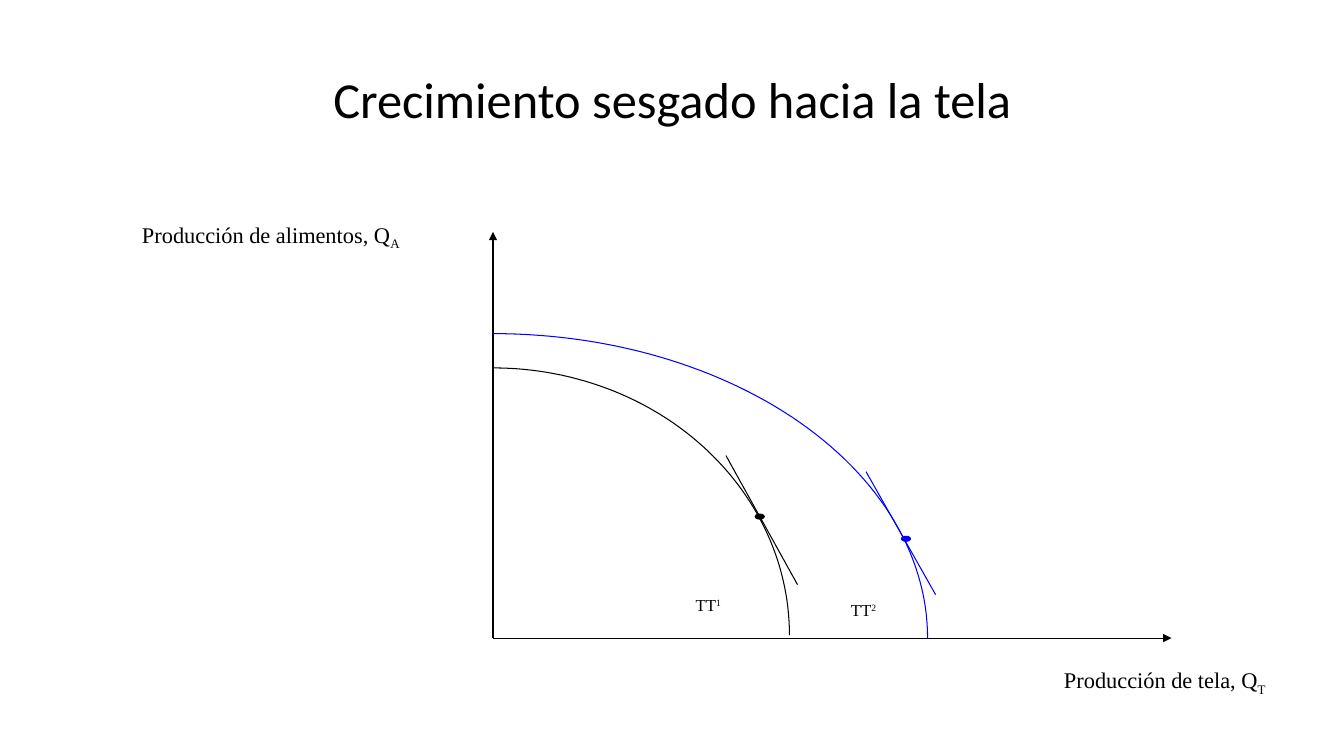
from math import cos, pi, sin

from lxml import etree
from pptx import Presentation
from pptx.dml.color import RGBColor
from pptx.enum.shapes import MSO_CONNECTOR, MSO_SHAPE
from pptx.enum.text import MSO_ANCHOR, PP_ALIGN
from pptx.oxml.ns import qn
from pptx.util import Inches, Pt

LEFT, CENTER, RIGHT = PP_ALIGN.LEFT, PP_ALIGN.CENTER, PP_ALIGN.RIGHT
TOP, MIDDLE = MSO_ANCHOR.TOP, MSO_ANCHOR.MIDDLE
RECTANGLE, OVAL = MSO_SHAPE.RECTANGLE, MSO_SHAPE.OVAL
STRAIGHT = MSO_CONNECTOR.STRAIGHT

THEME = {
    "black": RGBColor(0, 0, 0),
    "blue": RGBColor(0, 0, 255),
    "white": RGBColor(255, 255, 255),
    "title_font": "Calibri",
    "label_font": "Times New Roman",
    "title": Pt(36),
    "axis": Pt(16),
    "curve": Pt(12),
    "stroke": Pt(0.75),
}

TITLE = ("Crecimiento sesgado hacia la tela", (1.42, 0.33, 10.5, 1.29))
LABELS = [
    ("Producción de alimentos, Q", "A", -25, "axis", LEFT, (1.31, 2.14, 3.41, 1.53)),
    ("Producción de tela, Q", "T", -25, "axis", RIGHT, (9.33, 6.56, 3.32, 0.94)),
    ("TT", "2", 30, "curve", LEFT, (8.34, 5.9, 1.19, 0.43)),
    ("TT", "1", 30, "curve", LEFT, (6.8, 5.85, 1.19, 0.43)),
]
ORIGIN = (4.89, 6.33)
AXIS_ENDS = [(11.62, 6.33), (4.89, 2.3)]
FRONTIERS = [
    ("blue", 3.31, (9.2, 6.33)),
    ("black", 3.65, (7.83, 6.3)),
]
TANGENTS = [
    ("black", (7.2, 4.52), (7.91, 5.8)),
    ("blue", (8.59, 4.68), (9.28, 5.9)),
]
POINTS = [("black", (7.49, 5.1)), ("blue", (8.94, 5.32))]
POINT_SIZE = (0.09, 0.05)
CURVE_STEPS = 60


def inches(values):
    return [Inches(value) for value in values]


def write(box, text, font, size, align, anchor):
    frame = box.text_frame
    frame.word_wrap = True
    frame.vertical_anchor = anchor
    para = frame.paragraphs[0]
    para.alignment = align
    para.font.name = font
    para.font.size = size
    para.font.color.rgb = THEME["black"]
    para.add_run().text = text
    return para


def add_label(page, text, index, baseline, size, align, place):
    box = page.shapes.add_shape(RECTANGLE, *inches(place))
    box.shadow.inherit = False
    box.fill.solid()
    box.fill.fore_color.rgb = THEME["white"]
    box.line.fill.background()
    para = write(box, text, THEME["label_font"], THEME[size], align, TOP)
    span = para.add_run()
    span.text = index
    span.font._element.set("baseline", str(baseline * 1000))


def stroke(shape, color):
    shape.line.color.rgb = THEME[color]
    shape.line.width = THEME["stroke"]


def add_line(page, start, end, color, arrow=False):
    line = page.shapes.add_connector(STRAIGHT, *inches(start + end))
    stroke(line, color)
    if arrow:
        tail = etree.SubElement(line.line._get_or_add_ln(), qn("a:tailEnd"))
        tail.set("type", "triangle")
    etree.SubElement(line._element.spPr, qn("a:effectLst"))


def add_frontier(page, color, top, end):
    width, height = end[0] - ORIGIN[0], end[1] - top
    angles = [pi / 2 * step / CURVE_STEPS for step in range(CURVE_STEPS + 1)]
    dots = [
        inches((ORIGIN[0] + width * sin(angle), end[1] - height * cos(angle)))
        for angle in angles
    ]
    builder = page.shapes.build_freeform(*dots[0])
    builder.add_line_segments(dots[1:], close=False)
    curve = builder.convert_to_shape()
    curve.shadow.inherit = False
    curve.fill.background()
    stroke(curve, color)


def add_point(page, color, corner):
    point = page.shapes.add_shape(OVAL, *inches(corner + POINT_SIZE))
    point.shadow.inherit = False
    point.fill.solid()
    point.fill.fore_color.rgb = THEME[color]
    stroke(point, color)


def main():
    deck = Presentation()
    deck.slide_width, deck.slide_height = inches((13.33, 7.5))
    page = deck.slides.add_slide(deck.slide_layouts[6])

    text, place = TITLE
    box = page.shapes.add_textbox(*inches(place))
    write(box, text, THEME["title_font"], THEME["title"], CENTER, MIDDLE)

    for label in LABELS:
        add_label(page, *label)
    for end in AXIS_ENDS:
        add_line(page, ORIGIN, end, "black", arrow=True)
    for frontier in FRONTIERS:
        add_frontier(page, *frontier)
    for color, start, end in TANGENTS:
        add_line(page, start, end, color)
    for point in POINTS:
        add_point(page, *point)

    deck.save("out.pptx")


if __name__ == "__main__":
    main()
